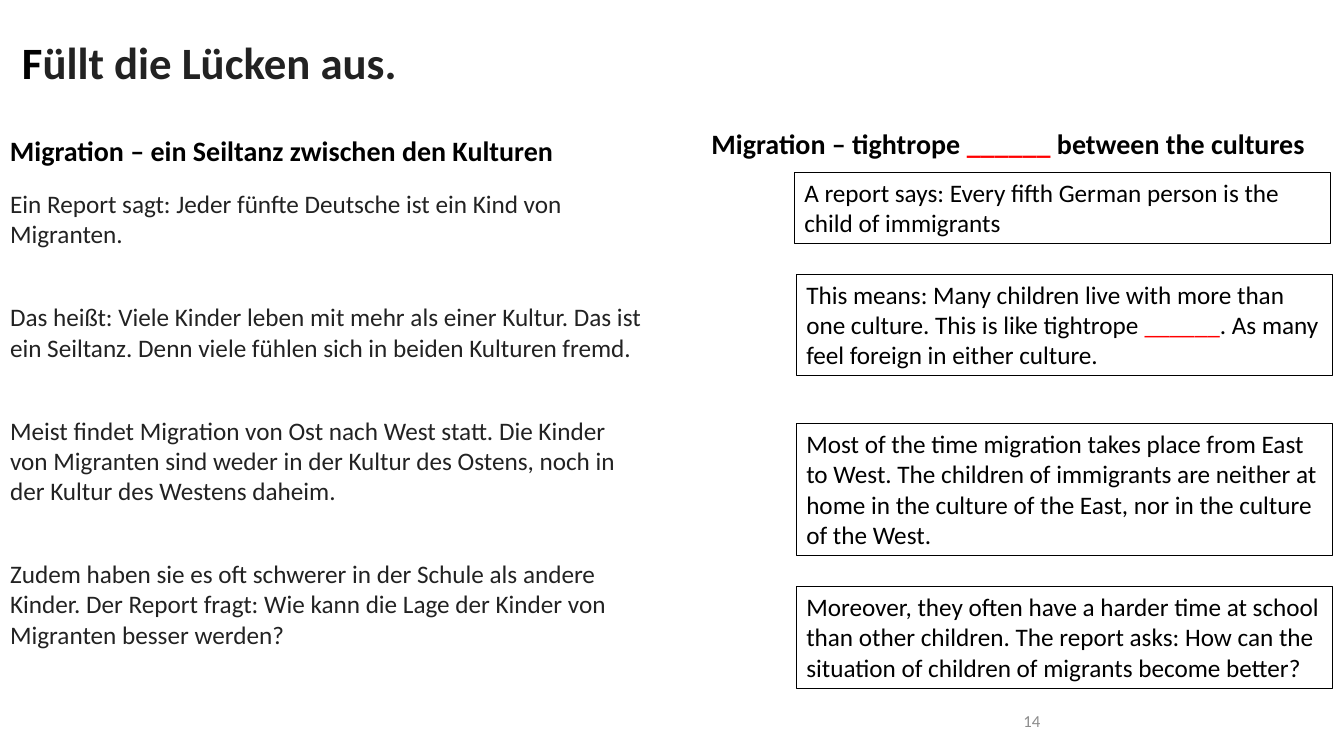
from pptx import Presentation
from pptx.dml.color import RGBColor
from pptx.enum.shapes import MSO_SHAPE
from pptx.enum.text import MSO_ANCHOR, MSO_AUTO_SIZE, PP_ALIGN
from pptx.util import Cm, Pt
from lxml.etree import SubElement
from pptx.oxml.ns import qn

BLACK, DARK, RED, GREY = "000000", "222222", "FF0000", "8C8C8C"
BLANK = "______"

TITLE = [("F", BLACK), ("üllt die Lücken aus.", DARK)]
GERMAN_HEADING = "Migration – ein Seiltanz zwischen den Kulturen"
ENGLISH_HEADING = f"Migration – tightrope {BLANK} between the cultures"
GERMAN = [
    "Ein Report sagt: Jeder fünfte Deutsche ist ein Kind von Migranten.",
    "Das heißt: Viele Kinder leben mit mehr als einer Kultur. Das ist ein Seiltanz. "
    "Denn viele fühlen sich in beiden Kulturen fremd.",
    "Meist findet Migration von Ost nach West statt. Die Kinder von Migranten sind "
    "weder in der Kultur des Ostens, noch in der Kultur des Westens daheim.",
    "Zudem haben sie es oft schwerer in der Schule als andere Kinder. "
    "Der Report fragt: Wie kann die Lage der Kinder von Migranten besser werden?",
]
ENGLISH = [
    (20.02, 4.34, 2, "A report says: Every fifth German person is the child of immigrants"),
    (20.07, 6.91, 3, "This means: Many children live with more than one culture. "
     f"This is like tightrope {BLANK}. As many feel foreign in either culture."),
    (20.07, 10.67, 4, "Most of the time migration takes place from East to West. "
     "The children of immigrants are neither at home in the culture of the East, "
     "nor in the culture of the West."),
    (20.07, 14.78, 3, "Moreover, they often have a harder time at school than other children. "
     "The report asks: How can the situation of children of migrants become better?"),
]
BOX_WIDTH, LINE_HEIGHT, BOX_PADDING = 13.51, 0.77, 0.25
PARAGRAPH_GAP = 37.7


def rgb(color):
    return RGBColor.from_string(color)


def with_blanks(text):
    before, blank, after = text.partition(BLANK)
    return [(t, c) for t, c in ((before, BLACK), (blank, RED), (after, BLACK)) if t]


def write(sp, paragraphs, size, bold=False, wrap=True, anchor=MSO_ANCHOR.TOP,
          align=PP_ALIGN.LEFT, gap=0):
    tf = sp.text_frame
    frame_format = {"word_wrap": wrap, "auto_size": MSO_AUTO_SIZE.NONE, "vertical_anchor": anchor}
    for name, value in frame_format.items():
        setattr(tf, name, value)
    paragraph_format = {"alignment": align, "space_before": Pt(0), "space_after": Pt(gap)}
    font_format = {"name": "Calibri", "size": Pt(size), "bold": bold}
    for i, runs in enumerate(paragraphs):
        p = tf.add_paragraph() if i else tf.paragraphs[0]
        for name, value in paragraph_format.items():
            setattr(p, name, value)
        for text, color in runs:
            r = p.add_run()
            r.text = text
            r.font.color.rgb = rgb(color)
            for name, value in font_format.items():
                setattr(r.font, name, value)


def place(sp, *lengths):
    for name, value in zip(("left", "top", "width", "height"), lengths):
        setattr(sp, name, Cm(value))
    return sp


def text_box(s, *lengths):
    return s.shapes.add_textbox(*map(Cm, lengths))


def bordered_box(s, left, top, lines):
    height = BOX_PADDING + lines * LINE_HEIGHT
    sp = s.shapes.add_shape(MSO_SHAPE.RECTANGLE, *map(Cm, (left, top, BOX_WIDTH, height)))
    sp.shadow.inherit = False
    sp.fill.background()
    sp.line.color.rgb = rgb(BLACK)
    sp.line.width = Pt(0.75)
    return sp


def main():
    prs = Presentation()
    prs.slide_width, prs.slide_height = Cm(33.87), Cm(19.05)
    s = prs.slides.add_slide(prs.slide_layouts[1])

    write(place(s.shapes.title, 0.3, 0.74, 10.03, 1.63), [TITLE], 32, bold=True, wrap=False)

    body = place(s.placeholders[1], 0, 4.62, 16.46, 12.75)
    write(body, [[(text, DARK)] for text in GERMAN], 18, gap=PARAGRAPH_GAP)
    for p in body.text_frame.paragraphs:
        pPr = p._p.get_or_add_pPr()
        pPr.set("marL", "0")
        pPr.set("indent", "0")
        SubElement(pPr, qn("a:buNone"))

    write(text_box(s, 0, 3.23, 14.33, 1.12), [with_blanks(GERMAN_HEADING)], 20,
          bold=True, wrap=False)
    write(text_box(s, 17.68, 3.07, 16.2, 1.12), [with_blanks(ENGLISH_HEADING)], 20, bold=True)
    for left, top, lines, text in ENGLISH:
        write(bordered_box(s, left, top, lines), [with_blanks(text)], 18)

    write(text_box(s, 18.85, 17.65, 7.62, 1.02), [[("14", GREY)]], 12,
          anchor=MSO_ANCHOR.MIDDLE, align=PP_ALIGN.RIGHT)
    prs.save("out.pptx")


if __name__ == "__main__":
    main()
